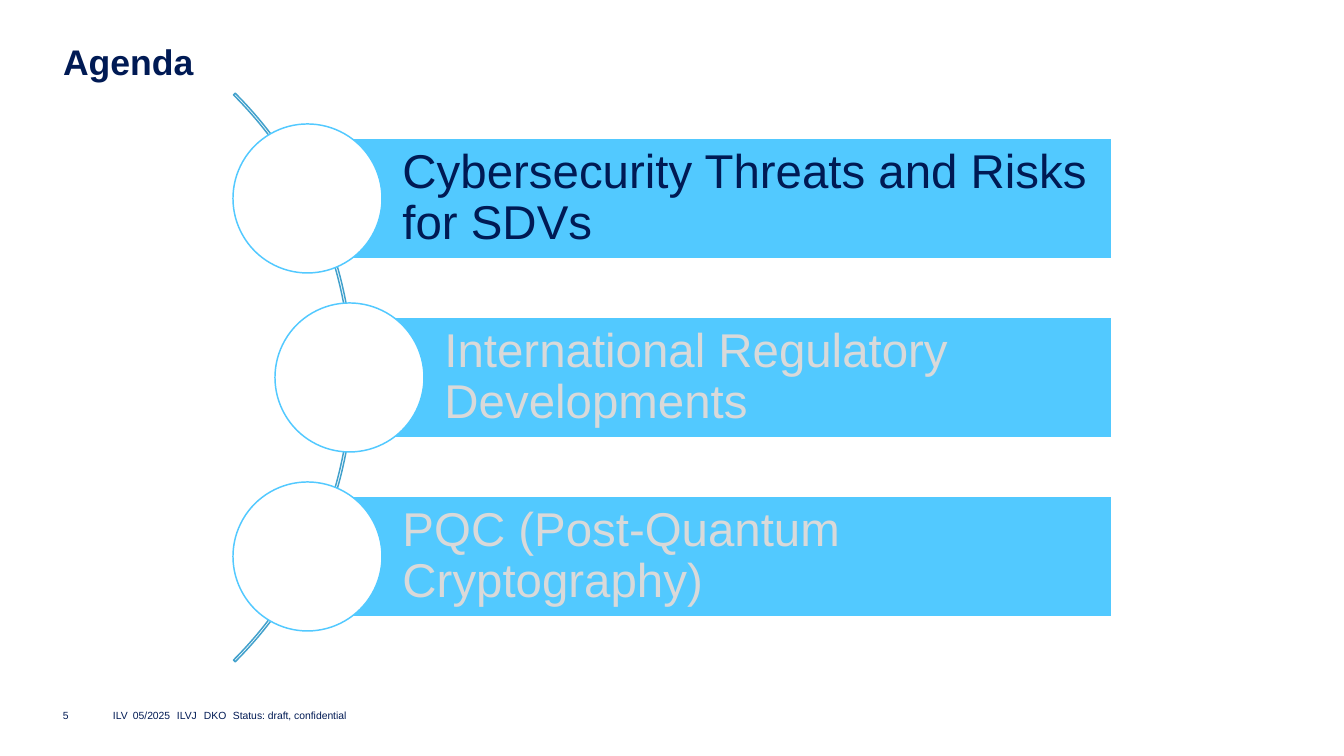
import pptx
import pptx.util
from pptx.dml.color import RGBColor
from pptx.enum.shapes import MSO_SHAPE
from pptx.enum.text import MSO_ANCHOR, MSO_AUTO_SIZE, PP_ALIGN
import lxml.etree

NAVY = RGBColor(0x00, 0x1A, 0x54)
SKY = RGBColor(0x52, 0xC9, 0xFF)
ARC_BLUE = RGBColor(0x42, 0xA1, 0xCC)
GREY = RGBColor(0xD9, 0xD9, 0xD9)
WHITE = RGBColor(0xFF, 0xFF, 0xFF)

HEADING = "Agenda"
TOPICS = [
    # wording, text colour, left of circle
    ("Cybersecurity Threats and Risks for SDVs", NAVY, 233),
    ("International Regulatory Developments", GREY, 275),
    ("PQC (Post-Quantum Cryptography)", GREY, 233),
]
PAGE_NUMBER = "5"
FOOTER = ["ILV", "05/2025", "ILVJ", "DKO", "Status: draft, confidential"]
FOOTER_TABS = [20, 64, 91, 120]

SLIDE_SIZE = (1344, 756)
PX = pptx.util.Cm(32) / SLIDE_SIZE[0]
CIRCLE = 149
FIRST_TOP = 124
STEP = 179
BAR_HEIGHT = 120
BAR_RIGHT = 1112
ARC = 804
ARC_LEFT = -451


def px(length):
    return pptx.util.Emu(round(length * PX))


def write(shape, text, size, color=NAVY, bold=False, spacing=1.0,
          anchor=MSO_ANCHOR.MIDDLE, insets=(0, 0, 0, 0), wrap=True, tabs=()):
    """Fill a shape with one left-aligned paragraph; insets run left, top, right, bottom."""
    frame = shape.text_frame
    frame.word_wrap = wrap
    frame.auto_size = MSO_AUTO_SIZE.NONE
    frame.vertical_anchor = anchor
    (frame.margin_left, frame.margin_top,
     frame.margin_right, frame.margin_bottom) = map(px, insets)
    paragraph = frame.paragraphs[0]
    paragraph.text = text
    paragraph.alignment = PP_ALIGN.LEFT
    paragraph.line_spacing = spacing
    if tabs:
        properties = paragraph._p.get_or_add_pPr()
        stops = lxml.etree.SubElement(properties, pptx.oxml.ns.qn("a:tabLst"))
        for stop in tabs:
            lxml.etree.SubElement(stops, pptx.oxml.ns.qn("a:tab"),
                                  pos=str(px(stop)), algn="l")
    font = paragraph.runs[0].font
    font.name = "Arial"
    font.size = pptx.util.Pt(size)
    font.bold = bold
    font.color.rgb = color


def add_outlined(slide, preset, box, line, fill=None):
    shape = slide.shapes.add_shape(preset, *map(px, box))
    shape.shadow.inherit = False
    if fill is None:
        shape.fill.background()
    else:
        shape.fill.solid()
        shape.fill.fore_color.rgb = fill
    shape.line.color.rgb = line
    shape.line.width = pptx.util.Pt(1)
    return shape


def add_topics(slide):
    middle = FIRST_TOP + (len(TOPICS) - 1) * STEP / 2 + CIRCLE / 2
    arc = add_outlined(slide, MSO_SHAPE.BLOCK_ARC,
                       (ARC_LEFT, middle - ARC / 2, ARC, ARC), ARC_BLUE)
    for index, value in enumerate((189, 27, 0.003)):
        arc.adjustments[index] = value

    for row, (topic, color, left) in enumerate(TOPICS):
        top = FIRST_TOP + row * STEP
        bar_left = left + CIRCLE / 2
        bar_top = top + (CIRCLE - BAR_HEIGHT) / 2
        bar = add_outlined(slide, MSO_SHAPE.RECTANGLE,
                           (bar_left, bar_top, BAR_RIGHT - bar_left, BAR_HEIGHT),
                           WHITE, SKY)
        write(bar, topic, 32, color, spacing=0.9, insets=(95, 10, 10, 10))
        add_outlined(slide, MSO_SHAPE.OVAL, (left, top, CIRCLE, CIRCLE), SKY, WHITE)


def main():
    deck = pptx.Presentation()
    deck.slide_width, deck.slide_height = map(px, SLIDE_SIZE)
    slide = deck.slides.add_slide(deck.slide_layouts[5])

    title = slide.shapes.title
    title.left, title.top, title.width, title.height = map(px, (63, 42, 1218, 43))
    write(title, HEADING, 24, bold=True, spacing=0.97, anchor=MSO_ANCHOR.TOP)

    add_topics(slide)

    number = slide.shapes.add_textbox(*map(px, (63, 705, 42, 21)))
    write(number, PAGE_NUMBER, 7, wrap=False)
    footer = slide.shapes.add_textbox(*map(px, (113, 705, 538, 21)))
    write(footer, "\t".join(FOOTER), 7, tabs=FOOTER_TABS)

    deck.save("out.pptx")


if __name__ == "__main__":
    main()
